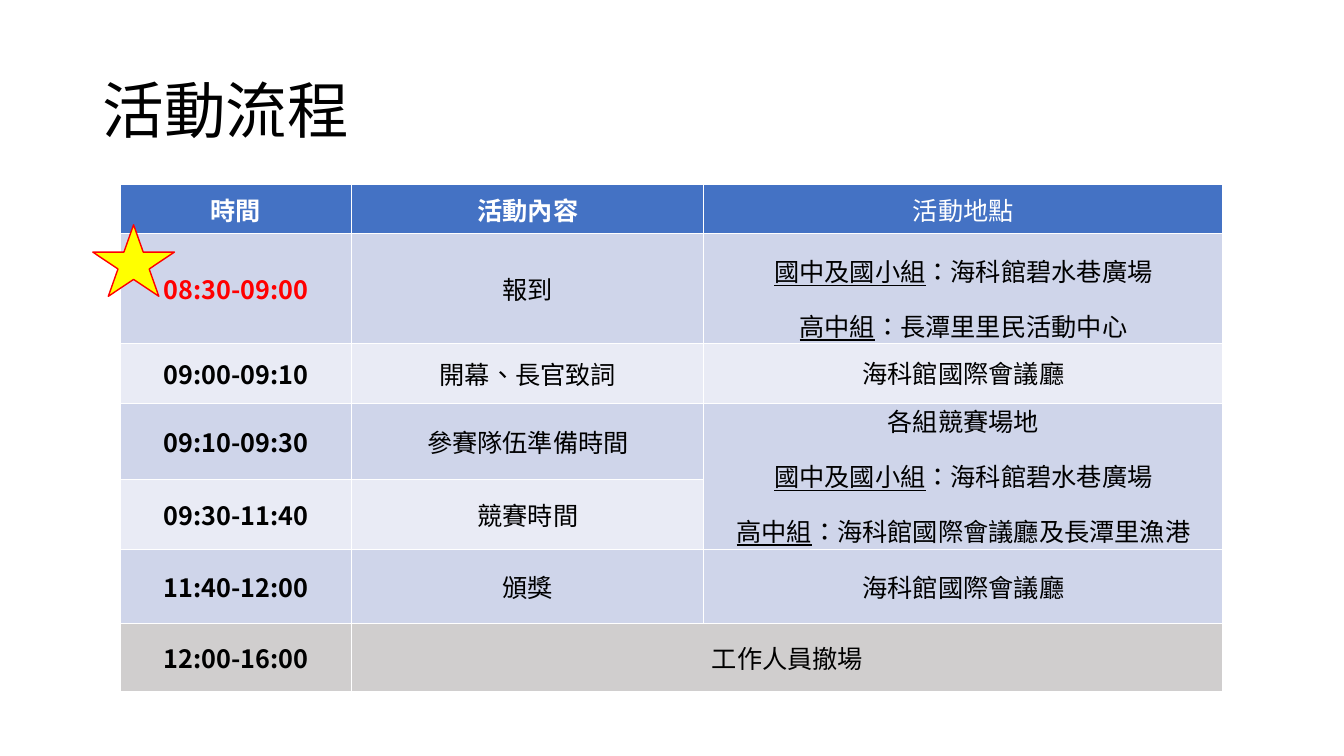
import pptx
import pptx.util
import pptx.oxml
import pptx.oxml.ns
import pptx.dml.color
import pptx.enum.shapes
import pptx.enum.text

Inches = pptx.util.Inches
Pt = pptx.util.Pt
MIDDLE = pptx.enum.text.MSO_ANCHOR.MIDDLE
CENTER = pptx.enum.text.PP_ALIGN.CENTER

SLIDE_W, SLIDE_H = 13.33, 7.5
TITLE_FONT, BODY_FONT = "Arial", "Noto Sans CJK SC"
COLORS = {
    "ink": "000000", "white": "FFFFFF", "header": "4472C4", "band": "CFD5EA",
    "light": "E9EBF5", "closing": "D0CECE", "alert": "FF0000", "star": "FFFF00",
}
COLUMN_WIDTHS = [2.3, 3.49, 5.15]
ROW_HEIGHTS = [0.49, 1.09, 0.59, 0.76, 0.69, 0.74, 0.67]
ROW_FILLS = ["header", "band", "light", "band", "light", "band", "closing"]
EXACT, LOOSE = Pt(25), 1.5
JUNIOR_PLACE = ("國中及國小組：海科館碧水巷廣場", LOOSE)
SCHEDULE = [
    ("時間", "活動內容", [("活動地點", None)]),
    ("08:30-09:00", "報到", [JUNIOR_PLACE, ("高中組：長潭里里民活動中心", LOOSE)]),
    ("09:00-09:10", "開幕、長官致詞", [("海科館國際會議廳", EXACT)]),
    ("09:10-09:30", "參賽隊伍準備時間",
     [("各組競賽場地", EXACT), JUNIOR_PLACE, ("高中組：海科館國際會議廳及長潭里漁港", LOOSE)]),
    ("09:30-11:40", "競賽時間", []),
    ("11:40-12:00", "頒獎", [("海科館國際會議廳", None)]),
    ("12:00-16:00", "工作人員撤場", []),
]
MERGES = [((3, 2), (4, 2)), ((6, 1), (6, 2))]


def rgb(name):
    """Return the named colour."""
    return pptx.dml.color.RGBColor.from_string(COLORS[name])


def apply(target, formats):
    """Set every attribute in formats on target."""
    for attribute, value in formats.items():
        setattr(target, attribute, value)


def add_run(paragraph, text, color, typeface, **formats):
    """Append a styled Traditional Chinese run with one typeface for all scripts."""
    run = paragraph.add_run()
    run.text = text
    apply(run.font, {"name": typeface, **formats})
    run.font.color.rgb = rgb(color)
    properties = run.font._element
    properties.set("lang", "zh-TW")
    east_asian = pptx.oxml.parse_xml(
        f'<a:ea {pptx.oxml.ns.nsdecls("a")} typeface="{typeface}"/>')
    properties.find(pptx.oxml.ns.qn("a:latin")).addnext(east_asian)


def add_title(slide, left, top, width, height):
    """Place the slide title in the given box."""
    frame = slide.shapes.add_textbox(*map(Inches, (left, top, width, height))).text_frame
    apply(frame, {"word_wrap": True, "vertical_anchor": MIDDLE})
    heading = frame.paragraphs[0]
    heading.line_spacing = 0.9
    add_run(heading, "活動流程", "ink", TITLE_FONT, size=Pt(44))


def add_borders(cell):
    """Draw thin white lines on the four sides of a cell."""
    properties = cell._tc.get_or_add_tcPr()
    for position, side in enumerate(("lnL", "lnR", "lnT", "lnB")):
        properties.insert(position, pptx.oxml.parse_xml(
            f'<a:{side} {pptx.oxml.ns.nsdecls("a")} w="{Pt(1)}"><a:solidFill>'
            f'<a:srgbClr val="{COLORS["white"]}"/></a:solidFill></a:{side}>'))


def fill_cell(cell, lines, fill, color, bold):
    """Fill a cell with centred lines, underlining each group label."""
    apply(cell, {"vertical_anchor": MIDDLE, "margin_left": Inches(0.07),
                 "margin_right": Inches(0.07), "margin_top": 0, "margin_bottom": 0})
    cell.fill.solid()
    cell.fill.fore_color.rgb = rgb(fill)
    add_borders(cell)
    for index, (text, spacing) in enumerate(lines):
        frame = cell.text_frame
        paragraph = frame.add_paragraph() if index else frame.paragraphs[0]
        apply(paragraph, {"alignment": CENTER, "line_spacing": spacing})
        group, colon, place = text.partition("：")
        for part, underline in ((group, bool(colon)), (colon + place, False)):
            if part:
                add_run(paragraph, part, color, BODY_FONT,
                        size=Pt(18), bold=bold, underline=underline)


def add_schedule(slide, left, top, width, height):
    """Place the timetable in the given box."""
    table = slide.shapes.add_table(
        len(ROW_HEIGHTS), len(COLUMN_WIDTHS), *map(Inches, (left, top, width, height))).table
    for column, column_width in zip(table.columns, COLUMN_WIDTHS):
        column.width = Inches(column_width)
    for row, row_height in zip(table.rows, ROW_HEIGHTS):
        row.height = Inches(row_height)
    for start, end in MERGES:
        table.cell(*start).merge(table.cell(*end))
    for r, (time, activity, places) in enumerate(SCHEDULE):
        for c, lines in enumerate(([(time, None)], [(activity, None)], places)):
            color = "white" if r == 0 else "alert" if (r, c) == (1, 0) else "ink"
            bold = c == 0 or (r, c) == (0, 1)
            fill_cell(table.cell(r, c), lines, ROW_FILLS[r], color, bold)


def add_star(slide, left, top, width, height):
    """Place the star that marks the check-in time."""
    star = slide.shapes.add_shape(
        pptx.enum.shapes.MSO_SHAPE.STAR_5_POINT, *map(Inches, (left, top, width, height)))
    star.shadow.inherit = False
    star.fill.solid()
    star.fill.fore_color.rgb = rgb("star")
    star.line.color.rgb = rgb("alert")
    star.line.width = Pt(1)


def main():
    """Build the slide and save it."""
    deck = pptx.Presentation()
    apply(deck, {"slide_width": Inches(SLIDE_W), "slide_height": Inches(SLIDE_H)})
    slide = deck.slides.add_slide(deck.slide_layouts[6])
    margin = 0.92
    add_title(slide, margin, 0.4, SLIDE_W - 2 * margin, 1.45)
    add_schedule(slide, 1.19, 1.83, sum(COLUMN_WIDTHS), sum(ROW_HEIGHTS))
    add_star(slide, margin, 2.23, 0.81, 0.71)
    deck.save("out.pptx")


if __name__ == "__main__":
    main()
